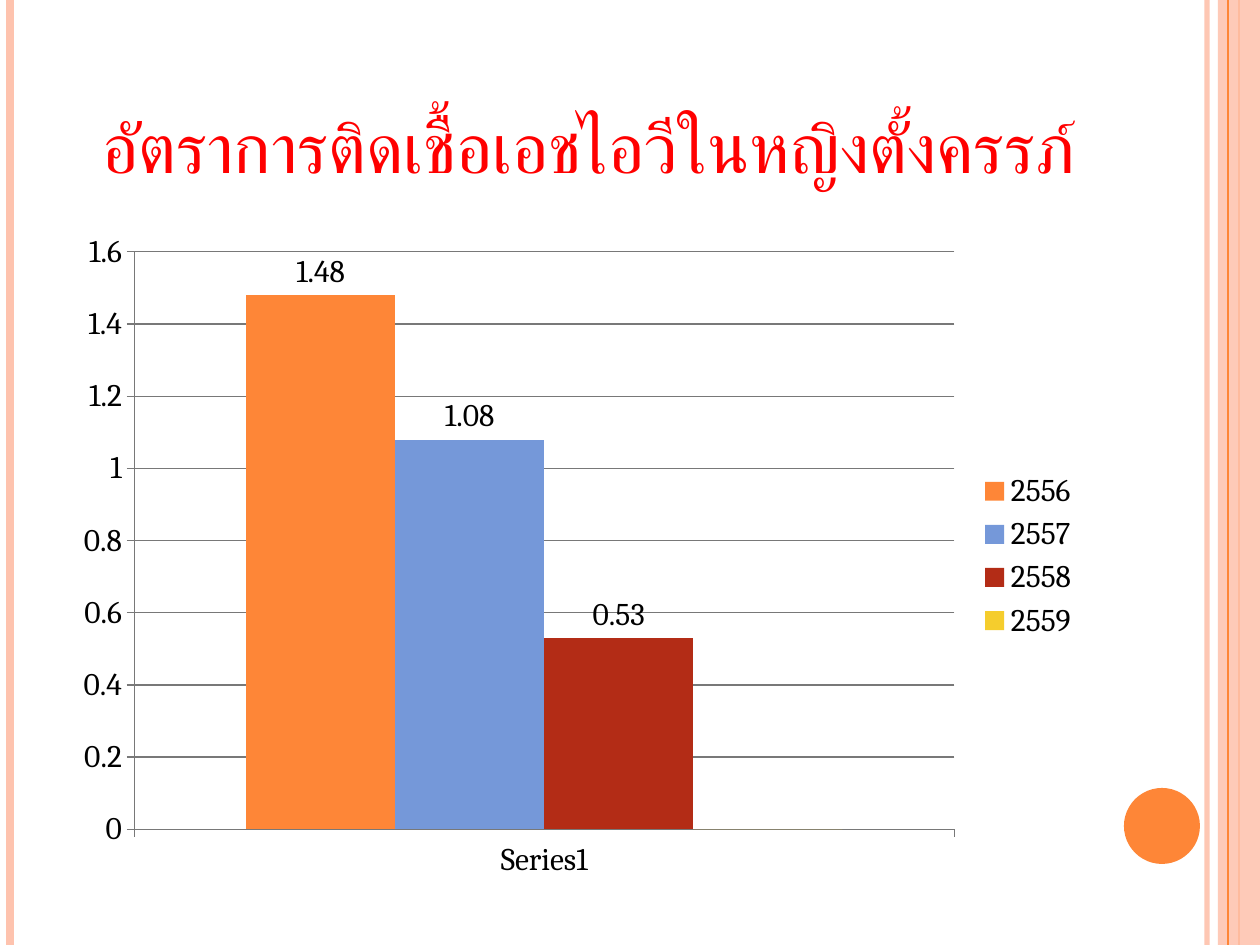
from pptx import Presentation
from pptx.chart.data import CategoryChartData
from pptx.dml.color import RGBColor
from pptx.enum.chart import XL_CHART_TYPE, XL_LABEL_POSITION, XL_LEGEND_POSITION, XL_TICK_MARK
from pptx.enum.shapes import MSO_CONNECTOR, MSO_SHAPE
from pptx.enum.text import MSO_ANCHOR, PP_ALIGN
from pptx.oxml.ns import qn
from pptx.util import Emu, Pt
from lxml.etree import SubElement

# Content
WIDTH, HEIGHT = 1260, 945
FONT = "Cambria"
ORANGE, PEACH, GRID = "FE8637", "FEC3AE", "787878"
TITLE = "อัตราการติดเชื้อเอชไอวีในหญิงตั้งครรภ์"
TITLE_BOX = (74, 37, 1030, 157)
CHART_BOX = (63, 220, 1029, 672)
CATEGORY = "Series1"
SERIES = [  # year, rate, colour, labelled
    ("2556", 1.48, ORANGE, True),
    ("2557", 1.08, "7598D9", True),
    ("2558", 0.53, "B32C16", True),
    ("2559", 0, "F5CD2D", False),
]
# x, colour, width in points, opacity in percent
LINES_BEHIND = [(1207, PEACH, 3, 93), (10, PEACH, 4.5, 100), (1239, ORANGE, 1.5, 100)]
LINES_FRONT = [(1228, ORANGE, 0.75, 100)]
BAND = (1218, 0, 42, HEIGHT)
DISC = (1124, 788, 76, 76)


def px(value):
    return Emu(round(value * 914400 / 126))


def place(box):
    return [px(value) for value in box]


def color(hex_code):
    return RGBColor.from_string(hex_code)


def set_opacity(element, percent):
    if percent < 100:
        fill = next(element.iter(qn("a:srgbClr")))
        SubElement(fill, qn("a:alpha"), val=str(percent * 1000))


def add_stripe(page, x, hex_code, width, opacity):
    line = page.shapes.add_connector(MSO_CONNECTOR.STRAIGHT, px(x), 0, px(x), px(HEIGHT))
    line.line.color.rgb = color(hex_code)
    line.line.width = Pt(width)
    properties = line._element.spPr
    set_opacity(properties, opacity)
    SubElement(properties, qn("a:effectLst"))


def add_shape(page, kind, box, hex_code, opacity=100):
    shape = page.shapes.add_shape(kind, *place(box))
    shape.shadow.inherit = False
    shape.fill.solid()
    shape.fill.fore_color.rgb = color(hex_code)
    shape.line.fill.background()
    set_opacity(shape._element.spPr, opacity)


def add_title(page):
    box = page.shapes.add_textbox(*place(TITLE_BOX))
    frame = box.text_frame
    frame.word_wrap = True
    frame.vertical_anchor = MSO_ANCHOR.BOTTOM
    para = frame.paragraphs[0]
    para.alignment = PP_ALIGN.CENTER
    span = para.add_run()
    span.text = TITLE
    span.font.size = Pt(40)
    span.font.name = FONT
    span.font.color.rgb = color("FF0000")
    properties = span.font._element
    properties.set("cap", "small")
    SubElement(properties, qn("a:cs"), typeface=FONT)


def add_chart(page):
    data = CategoryChartData()
    data.categories = [CATEGORY]
    for year, rate, _, _ in SERIES:
        data.add_series(year, [rate])
    chart = page.shapes.add_chart(
        XL_CHART_TYPE.COLUMN_CLUSTERED, *place(CHART_BOX), data).chart
    chart.has_title = False
    chart.font.size = Pt(18)
    chart.font.name = FONT
    chart.font.color.rgb = color("000000")
    chart.has_legend = True
    chart.legend.position = XL_LEGEND_POSITION.RIGHT
    chart.legend.include_in_layout = False

    # Axes
    for axis in (chart.category_axis, chart.value_axis):
        axis.major_tick_mark = XL_TICK_MARK.OUTSIDE
        axis.format.line.color.rgb = color(GRID)
    scale = chart.value_axis
    scale.minimum_scale, scale.maximum_scale, scale.major_unit = 0, 1.6, 0.2
    scale.has_major_gridlines = True
    scale.major_gridlines.format.line.color.rgb = color(GRID)

    # Columns and their labels
    plot = chart.plots[0]
    plot.gap_width = 150
    plot.vary_by_categories = False
    for series, (_, _, hex_code, labelled) in zip(plot.series, SERIES):
        series.format.fill.solid()
        series.format.fill.fore_color.rgb = color(hex_code)
        if labelled:
            series.data_labels.show_value = True
            series.data_labels.position = XL_LABEL_POSITION.OUTSIDE_END


def main():
    deck = Presentation()
    deck.slide_width, deck.slide_height = px(WIDTH), px(HEIGHT)
    page = deck.slides.add_slide(deck.slide_layouts[6])

    # Side decoration
    for stripe in LINES_BEHIND:
        add_stripe(page, *stripe)
    add_shape(page, MSO_SHAPE.RECTANGLE, BAND, PEACH, 87)
    for stripe in LINES_FRONT:
        add_stripe(page, *stripe)
    add_shape(page, MSO_SHAPE.OVAL, DISC, ORANGE)

    add_title(page)
    add_chart(page)
    deck.save("out.pptx")


if __name__ == "__main__":
    main()
